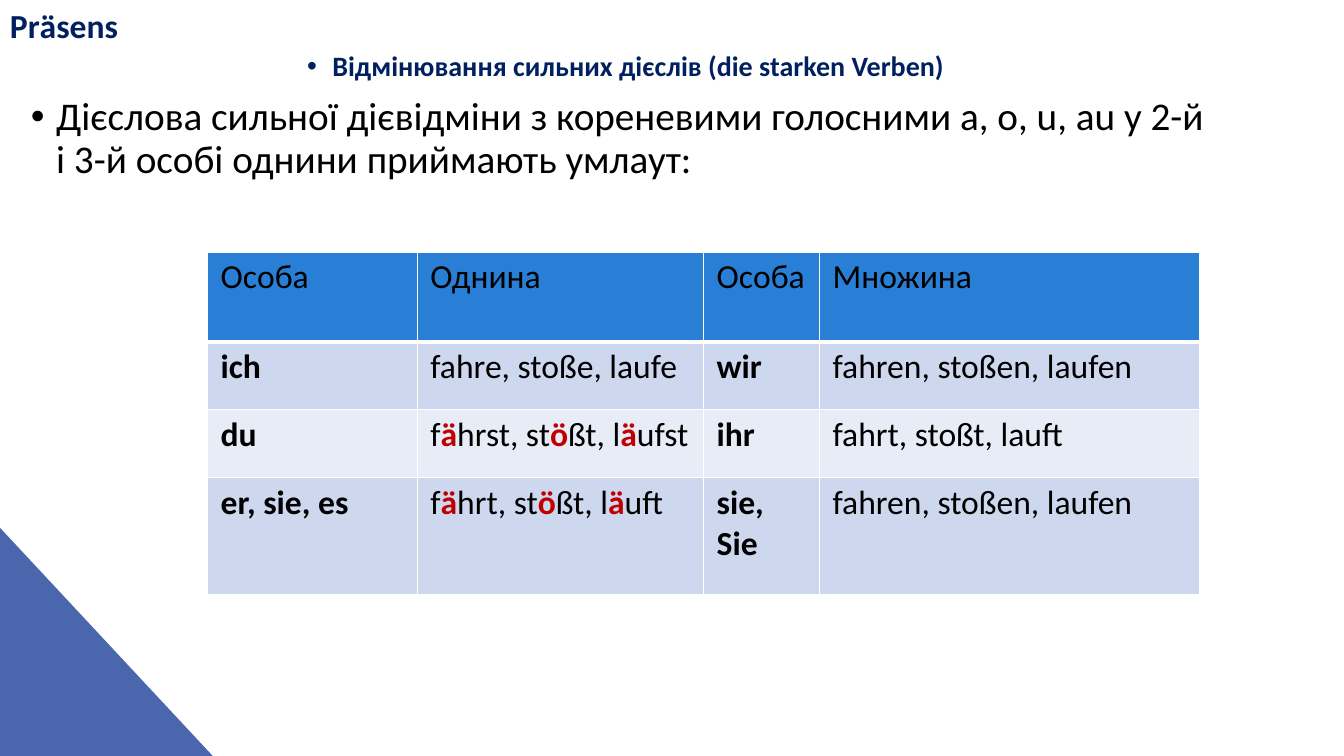
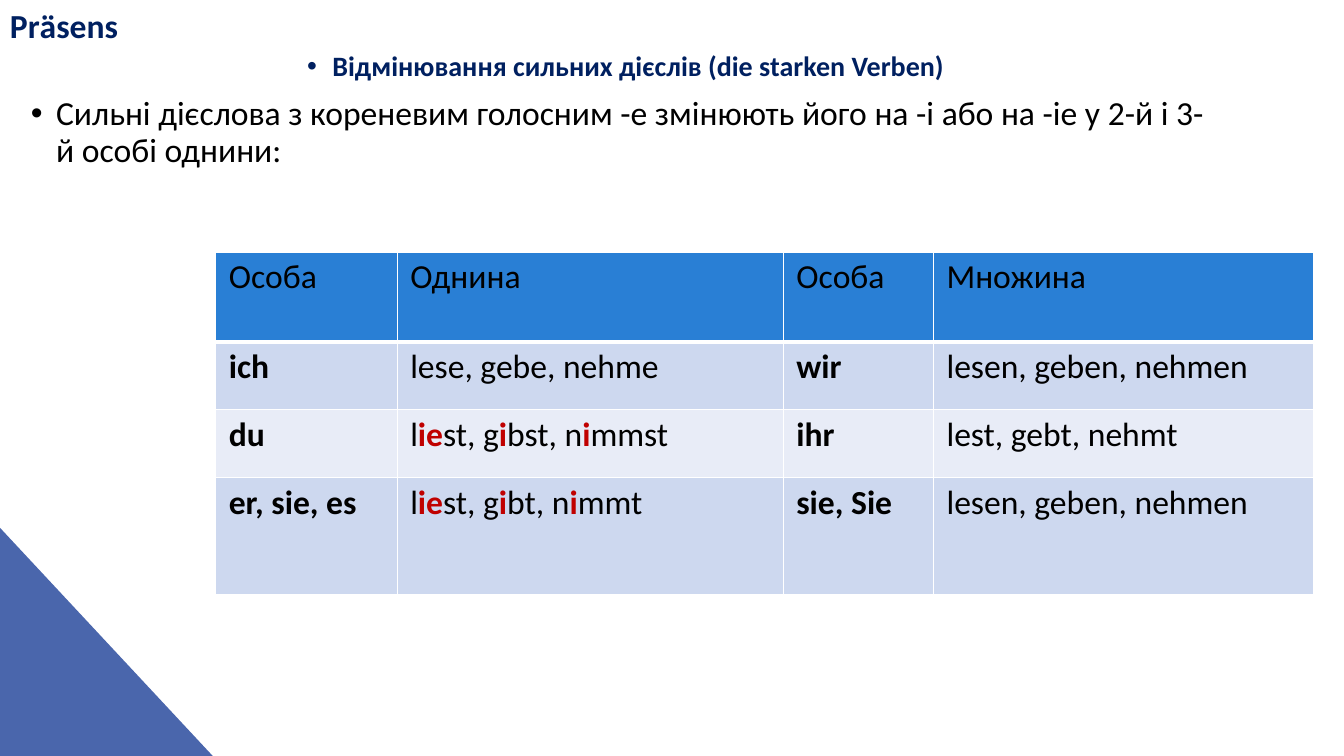
from pptx import Presentation
from pptx.dml.color import RGBColor
from pptx.enum.shapes import MSO_SHAPE
from pptx.enum.text import PP_ALIGN
from pptx.oxml.ns import qn
from pptx.util import Pt
from lxml.etree import SubElement

# Colours
NAVY = RGBColor(0x00, 0x20, 0x60)
BLACK = RGBColor(0x00, 0x00, 0x00)
RED = RGBColor(0xC0, 0x00, 0x00)
WHITE = RGBColor(0xFF, 0xFF, 0xFF)
CORNER = RGBColor(0x4A, 0x66, 0xAC)
HEAD = RGBColor(0x29, 0x7F, 0xD5)
BANDS = [RGBColor(0xE8, 0xEC, 0xF7), RGBColor(0xCD, 0xD8, 0xEF)]

# Formats
FONT = "Calibri"
TITLE = {"name": FONT, "size": Pt(24), "bold": True}
TOPIC = {"name": FONT, "size": Pt(20), "bold": True}
PLAIN = {"name": FONT, "size": Pt(24), "bold": False}
STRONG = {**PLAIN, "bold": True}
CELL = {"margin_left": Pt(9.36), "margin_right": Pt(9.36),
        "margin_top": Pt(3.6), "margin_bottom": Pt(3.6)}
ITEM = {"line_spacing": 0.9, "space_before": Pt(0)}

# Content: letters between bars are vowels that change
TOP = ["Особа", "Однина", "Особа", "Множина"]
HIGHS = [64.3, 48.3, 48.3, 83.7]
SLIDES = [
    {"rule": "Дієслова сильної дієвідміни з кореневими голосними а, о, u, au "
             "у 2-й і 3-й особі однини приймають умлаут:",
     "size": 28, "left": 148.3, "cols": [149.8, 204.5, 82.8, 271.4],
     "rows": [
         ["ich", "fahre, stoße, laufe", "wir", "fahren, stoßen, laufen"],
         ["du", "f|ä|hrst, st|ö|ßt, l|ä|ufst", "ihr", "fahrt, stoßt, lauft"],
         ["er, sie, es", "f|ä|hrt, st|ö|ßt, l|ä|uft", "sie, Sie",
          "fahren, stoßen, laufen"]]},
    {"rule": "Сильні дієслова з кореневим голосним -е змінюють його на -і "
             "або на -іе у 2-й і 3-й особі однини:",
     "size": 24, "left": 154.1, "cols": [129.6, 275.8, 107.3, 271.4],
     "rows": [
         ["ich", "lese, gebe, nehme", "wir", "lesen, geben, nehmen"],
         ["du", "l|ie|st, g|i|bst, n|i|mmst", "ihr", "lest, gebt, nehmt"],
         ["er, sie, es", "l|ie|st, g|i|bt, n|i|mmt", "sie, Sie",
          "lesen, geben, nehmen"]]},
]


def write(para, text, form, color):
    for i, part in enumerate(text.split("|")):
        run = para.add_run()
        run.text = part
        for key, val in form.items():
            setattr(run.font, key, val)
        run.font.color.rgb = color
        if i % 2:
            run.font.bold = True
            run.font.color.rgb = RED


def edge(cell, side, width):
    line = SubElement(cell._tc.get_or_add_tcPr(), qn("a:" + side), w=str(Pt(width)))
    fill = SubElement(line, qn("a:solidFill"))
    SubElement(fill, qn("a:srgbClr"), val=str(WHITE))


deck = Presentation()
deck.slide_width, deck.slide_height = Pt(960), Pt(540)

for data in SLIDES:
    slide = deck.slides.add_slide(deck.slide_layouts[6])
    shapes = slide.shapes

    # Corner
    corner = shapes.add_shape(MSO_SHAPE.RIGHT_TRIANGLE,
                              Pt(0), Pt(377), Pt(152), Pt(163))
    corner.shadow.inherit = False
    corner.fill.solid()
    corner.fill.fore_color.rgb = CORNER
    corner.line.fill.background()

    # Topic and rule
    body = shapes.add_textbox(Pt(15), Pt(34), Pt(864), Pt(356)).text_frame
    body.word_wrap = True
    topic, rule = body.paragraphs[0], body.add_paragraph()
    for para in (topic, rule):
        props = para._p.get_or_add_pPr()
        props.set("marL", str(Pt(18)))
        props.set("indent", str(Pt(-18)))
        SubElement(props, qn("a:buFont"), typeface="Arial")
        SubElement(props, qn("a:buChar"), char="•")
        for key, val in ITEM.items():
            setattr(para, key, val)
    topic.alignment = PP_ALIGN.CENTER
    rule.space_before = Pt(10)
    write(topic, "Відмінювання сильних дієслів (die starken Verben)", TOPIC, NAVY)
    write(rule, data["rule"], {**PLAIN, "size": Pt(data["size"])}, BLACK)

    # Title
    title = shapes.add_textbox(Pt(0), Pt(0), Pt(135), Pt(36)).text_frame
    title.word_wrap = True
    write(title.paragraphs[0], "Prӓsens", TITLE, NAVY)

    # Table
    rows, cols = [TOP] + data["rows"], data["cols"]
    table = shapes.add_table(len(rows), len(cols), Pt(data["left"]), Pt(180),
                             Pt(sum(cols)), Pt(sum(HIGHS))).table
    for col, width in zip(table.columns, cols):
        col.width = Pt(width)
    for r, row in enumerate(rows):
        table.rows[r].height = Pt(HIGHS[r])
        for c, text in enumerate(row):
            cell = table.cell(r, c)
            for key, val in CELL.items():
                setattr(cell, key, val)
            for side in ("lnL", "lnR", "lnT", "lnB"):
                edge(cell, side, 3 if r == 0 and side == "lnB" else 1)
            cell.fill.solid()
            cell.fill.fore_color.rgb = BANDS[r % 2] if r else HEAD
            form = STRONG if r and c % 2 == 0 else PLAIN
            write(cell.text_frame.paragraphs[0], text, form, BLACK)

deck.save("out.pptx")
